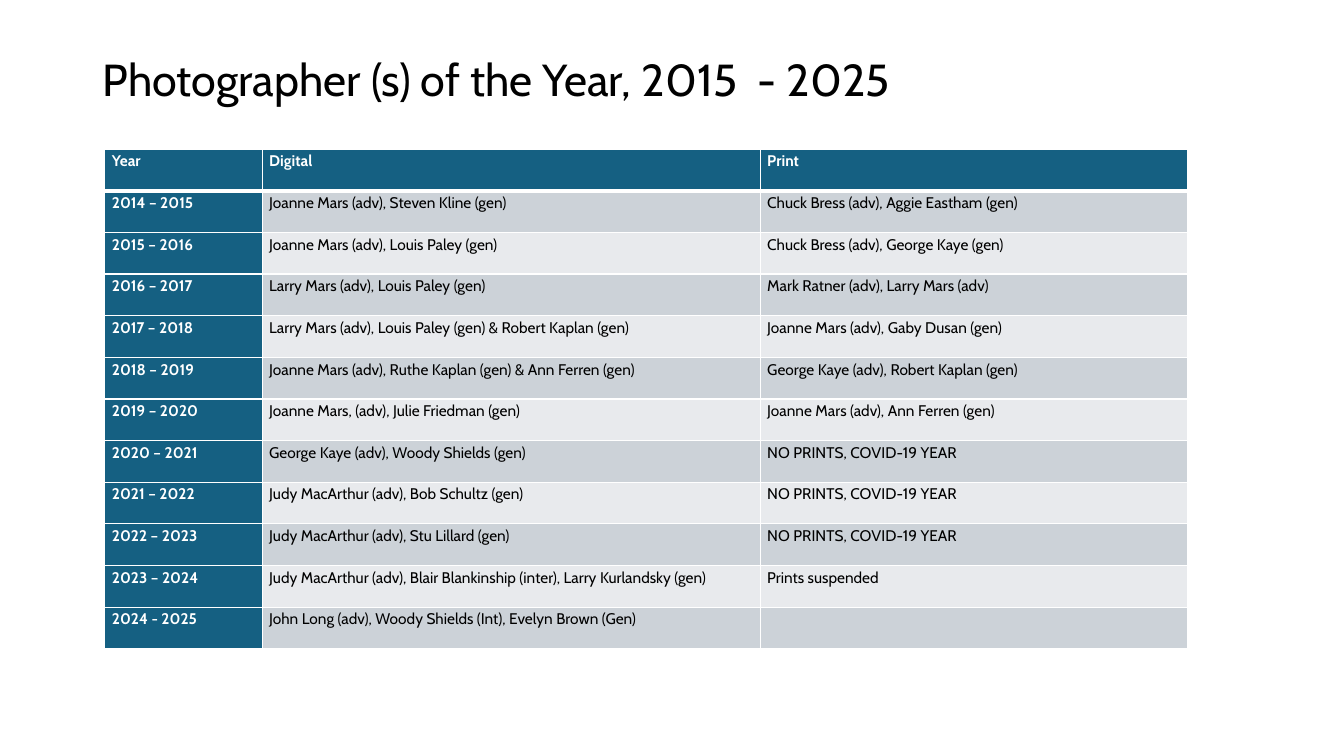
from lxml.etree import SubElement
from pptx import Presentation
from pptx.dml.color import RGBColor
from pptx.enum.text import MSO_ANCHOR
from pptx.oxml.ns import qn
from pptx.util import Emu, Pt

PX = 9144  # 100 px to the inch
FONT = "Cabin"
COLORS = {"ink": "000000", "white": "FFFFFF", "teal": "156082",
          "dark": "CCD2D8", "light": "E8EAED"}
COLS = (156, 494, 424)
HEADS = ("Year", "Digital", "Print")
CLOSED = "NO PRINTS, COVID-19 YEAR"
WINNERS = (
    ("2014 – 2015", "Joanne Mars (adv), Steven Kline (gen)",
     "Chuck Bress (adv), Aggie Eastham (gen)"),
    ("2015 – 2016", "Joanne Mars (adv), Louis Paley (gen)",
     "Chuck Bress (adv), George Kaye (gen)"),
    ("2016 – 2017", "Larry Mars (adv), Louis Paley (gen)",
     "Mark Ratner (adv), Larry Mars (adv)"),
    ("2017 – 2018", "Larry Mars (adv), Louis Paley (gen) & Robert Kaplan (gen)",
     "Joanne Mars (adv), Gaby Dusan (gen)"),
    ("2018 – 2019", "Joanne Mars (adv), Ruthe Kaplan (gen) & Ann Ferren (gen)",
     "George Kaye (adv), Robert Kaplan (gen)"),
    ("2019 – 2020", "Joanne Mars, (adv), Julie Friedman (gen)",
     "Joanne Mars (adv), Ann Ferren (gen)"),
    ("2020 – 2021", "George Kaye (adv), Woody Shields (gen)", CLOSED),
    ("2021 – 2022", "Judy MacArthur (adv), Bob Schultz (gen)", CLOSED),
    ("2022 – 2023", "Judy MacArthur (adv), Stu Lillard (gen)", CLOSED),
    ("2023 – 2024",
     "Judy MacArthur (adv), Blair Blankinship (inter), Larry Kurlandsky (gen)",
     "Prints suspended"),
    ("2024 - 2025", "John Long (adv), Woody Shields (Int), Evelyn Brown (Gen)", ""),
)


def px(n):
    return Emu(round(n * PX))


def rgb(name):
    return RGBColor.from_string(COLORS[name])


def add_run(para, text, size, color, bold=False):
    run = para.add_run()
    run.text = text
    font = run.font
    font.name, font.size, font.bold = FONT, Pt(size), bold
    font.color.rgb = rgb(color)


def add_edges(cell, **widths):
    """Draw white cell borders; they precede the fill in the cell's XML."""
    props = cell._tc.get_or_add_tcPr()
    for spot, (side, width) in enumerate(widths.items()):
        line = SubElement(props, qn("a:ln" + side), w=str(Pt(width)))
        fill = SubElement(line, qn("a:solidFill"))
        SubElement(fill, qn("a:srgbClr"), val=COLORS["white"])
        props.insert(spot, line)


def add_title(slide, x, y, w, h):
    title = slide.shapes.title
    title.left, title.top, title.width, title.height = map(px, (x, y, w, h))
    frame = title.text_frame
    frame.word_wrap = True
    frame.vertical_anchor = MSO_ANCHOR.MIDDLE
    para = frame.paragraphs[0]
    para.alignment = 1  # left
    para.line_spacing = 0.9
    add_run(para, "Photographer (s) of the Year, 2015  - 2025", 32, "ink")


def fill_cell(cell, text, row, col):
    head = row == 0 or col == 0
    back = "teal" if head else "dark" if row % 2 else "light"
    cell.fill.solid()
    cell.fill.fore_color.rgb = rgb(back)
    cell.margin_left = cell.margin_right = px(7)
    cell.margin_top = cell.margin_bottom = 0
    add_edges(cell, L=1, R=1, T=3 if row == 1 else 1, B=3 if row == 0 else 1)
    if text:
        para = cell.text_frame.paragraphs[0]
        para.line_spacing, para.space_after = 1.15, Pt(10)
        add_run(para, text, 11, "white" if head else "ink", head)


def add_awards(slide, x, y, w, h):
    rows = (HEADS, *WINNERS)
    table = slide.shapes.add_table(
        len(rows), len(COLS), px(x), px(y), px(w), px(h)).table
    for col, width in zip(table.columns, COLS):
        col.width = px(width)
    for r, texts in enumerate(rows):
        table.rows[r].height = px(h / len(rows))
        for c, text in enumerate(texts):
            fill_cell(table.cell(r, c), text, r, c)


def main():
    deck = Presentation()
    deck.slide_width, deck.slide_height = px(1333), px(750)
    slide = deck.slides.add_slide(deck.slide_layouts[5])  # title only
    add_title(slide, 92, 40, 1150, 82)
    add_awards(slide, 104, 148, sum(COLS), 496)
    deck.save("out.pptx")


if __name__ == "__main__":
    main()
